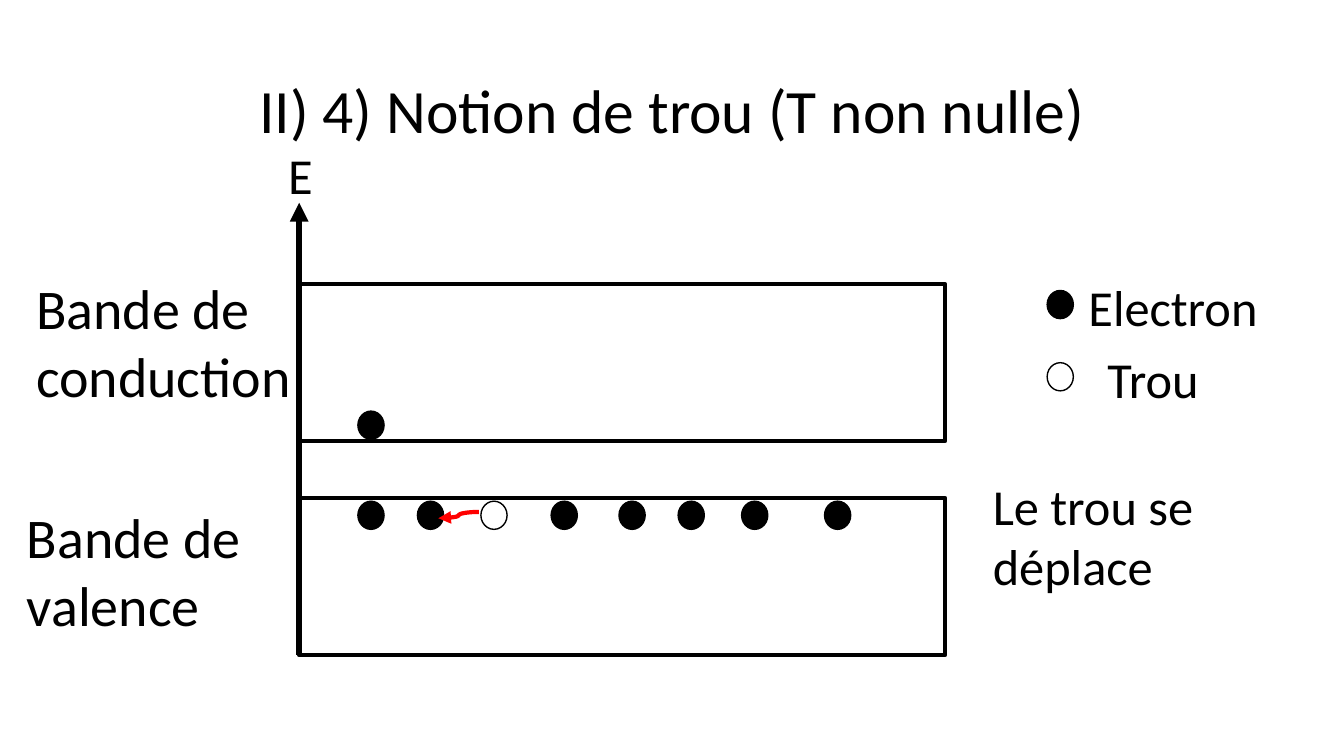
from lxml import etree
from pptx import Presentation
from pptx import util as u
from pptx.dml.color import RGBColor
from pptx.enum import shapes, text
from pptx.oxml.ns import qn

COLORS = {"ink": "000000", "move": "FF0000"}
FONT = "Calibri"

AXIS_X = 7.54
AXIS_TOP = 5.11
BAND_WIDTH, BAND_HEIGHT = 16.28, 3.96
CONDUCTION_TOP, VALENCE_TOP = 7.16, 12.55
CARRIER_WIDTH, CARRIER_HEIGHT = 0.66, 0.71
CONDUCTION_ELECTRON_Y, VALENCE_CARRIER_Y = 10.36, 12.63
VALENCE_ELECTRONS_X = [9.02, 10.52, 13.89, 15.6, 17.09, 18.69, 20.78]
HOLE_X = 12.12
LEGEND_X = 26.39

# text, left, top, width, height, size
LABELS = [
    ("Bande de conduction", 0.66, 6.78, 10.87, 3.68, 40),
    ("Bande de\nvalence", 0.43, 12.55, 6.3, 3.68, 40),
    ("E", 7.01, 3.51, 1.04, 1.8, 36),
    ("Electron", 27.18, 6.83, 4.93, 1.8, 36),
    ("Trou", 27.66, 8.64, 4.32, 1.8, 36),
    ("Le trou se déplace", 24.77, 11.84, 8.1, 3.33, 36),
]


def color(name):
    return RGBColor.from_string(COLORS[name])


def add_label(slide, wording, left, top, width, height, size):
    box = slide.shapes.add_textbox(u.Cm(left), u.Cm(top), u.Cm(width), u.Cm(height))
    frame = box.text_frame
    frame.word_wrap = True
    frame.text = wording
    for paragraph in frame.paragraphs:
        for run in paragraph.runs:
            run.font.name = FONT
            run.font.size = u.Pt(size)
            run.font.color.rgb = color("ink")
    return frame


def add_title(slide, wording):
    frame = add_label(slide, wording, 2.34, 1.02, 29.21, 3.68, 44)
    frame.vertical_anchor = text.MSO_ANCHOR.MIDDLE
    frame.paragraphs[0].alignment = text.PP_ALIGN.CENTER
    frame.paragraphs[0].line_spacing = 0.9


def add_outline(slide, kind, left, top, width, height, line_width):
    shape = slide.shapes.add_shape(kind, u.Cm(left), u.Cm(top), u.Cm(width), u.Cm(height))
    shape.shadow.inherit = False
    shape.fill.background()
    shape.line.color.rgb = color("ink")
    shape.line.width = u.Pt(line_width)
    return shape


def add_band(slide, top):
    add_outline(slide, shapes.MSO_SHAPE.RECTANGLE, AXIS_X, top, BAND_WIDTH, BAND_HEIGHT, 3)


def add_hole(slide, left, top):
    return add_outline(slide, shapes.MSO_SHAPE.OVAL, left, top,
                       CARRIER_WIDTH, CARRIER_HEIGHT, 1)


def add_electron(slide, left, top):
    electron = add_hole(slide, left, top)
    electron.fill.solid()
    electron.fill.fore_color.rgb = color("ink")


def add_arrow(slide, kind, start, end, line_color, line_width):
    arrow = slide.shapes.add_connector(kind, *(u.Cm(value) for value in (*start, *end)))
    arrow.line.color.rgb = color(line_color)
    arrow.line.width = u.Pt(line_width)
    etree.SubElement(arrow.line._get_or_add_ln(), qn("a:tailEnd"), type="triangle")
    etree.SubElement(arrow._element.spPr, qn("a:effectLst"))


def main():
    presentation = Presentation()
    presentation.slide_width = u.Cm(33.87)
    presentation.slide_height = u.Cm(19.05)
    slide = presentation.slides.add_slide(presentation.slide_layouts[6])

    add_title(slide, "II) 4) Notion de trou (T non nulle)")
    for top in (VALENCE_TOP, CONDUCTION_TOP):
        add_band(slide, top)
    for left in VALENCE_ELECTRONS_X:
        add_electron(slide, left, VALENCE_CARRIER_Y)
    add_hole(slide, HOLE_X, VALENCE_CARRIER_Y)
    add_electron(slide, VALENCE_ELECTRONS_X[0], CONDUCTION_ELECTRON_Y)
    add_electron(slide, LEGEND_X, 7.32)
    add_hole(slide, LEGEND_X, 9.14)
    for label in LABELS:
        add_label(slide, *label)

    add_arrow(slide, shapes.MSO_CONNECTOR.STRAIGHT,
              (AXIS_X, VALENCE_TOP + BAND_HEIGHT), (AXIS_X, AXIS_TOP), "ink", 4.5)
    add_arrow(slide, shapes.MSO_CONNECTOR.CURVE, (12.07, 12.9), (11.05, 13.06), "move", 3)

    presentation.save("out.pptx")


if __name__ == "__main__":
    main()
